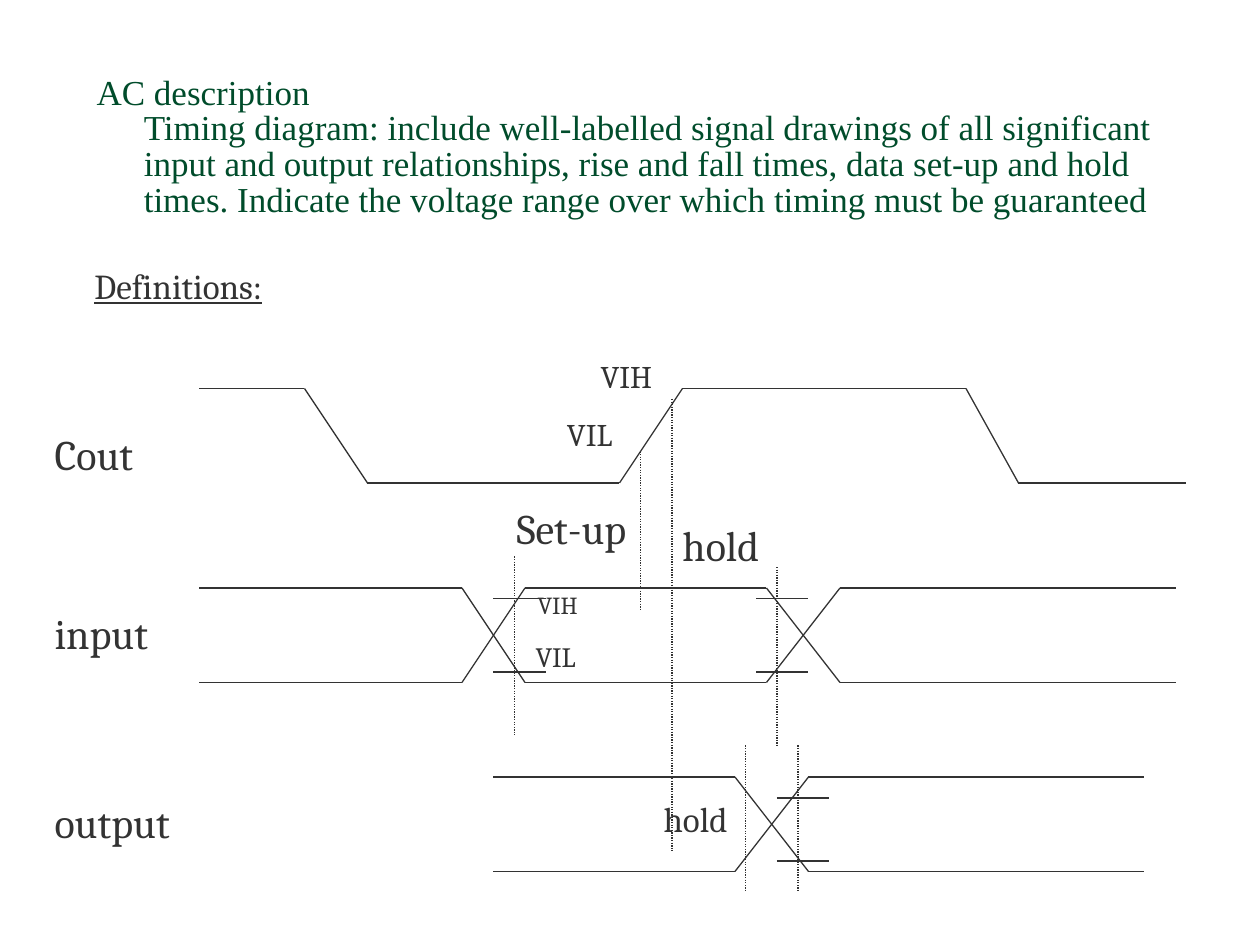
from itertools import pairwise

from lxml import etree
from pptx import Presentation
from pptx import util as u
from pptx.dml.color import RGBColor
from pptx.enum import dml, shapes, text
from pptx.oxml.ns import qn

EMU_PER_PX = 7620
COLORS = {"ink": "333333", "title": "004C2B"}


def px(length):
    return u.Emu(length * EMU_PER_PX)


class TimingSlide:
    body_font = "Cambria"
    title_font = "Times New Roman"
    line_width = u.Pt(0.75)
    line_spacing = 0.85

    def __init__(self, presentation):
        self.slide = presentation.slides.add_slide(presentation.slide_layouts[6])

    def label(self, words, box, size, color="ink", font=None, underline=None,
              anchor=text.MSO_ANCHOR.TOP):
        shape = self.slide.shapes.add_textbox(*map(px, box))
        frame = shape.text_frame
        frame.word_wrap = True
        frame.vertical_anchor = anchor
        frame.margin_left = frame.margin_right = px(2)
        frame.margin_top = frame.margin_bottom = px(6)
        frame.text = words
        paragraph = frame.paragraphs[0]
        paragraph.line_spacing = self.line_spacing
        for run in paragraph.runs:
            run.font.name = font or self.body_font
            run.font.size = u.Pt(size)
            run.font.underline = underline
            run.font.color.rgb = RGBColor.from_string(COLORS[color])
        return paragraph

    def title(self, words, box, size, hanging):
        paragraph = self.label(words, box, size, "title", self.title_font,
                               anchor=text.MSO_ANCHOR.MIDDLE)
        properties = paragraph._p.get_or_add_pPr()
        properties.set("marL", str(px(hanging)))
        properties.set("indent", str(-px(hanging)))

    def line(self, start, end, dotted=False):
        connector = self.slide.shapes.add_connector(
            shapes.MSO_CONNECTOR.STRAIGHT, *map(px, (*start, *end)))
        connector.line.width = self.line_width
        connector.line.color.rgb = RGBColor.from_string(COLORS["ink"])
        if dotted:
            connector.line.dash_style = dml.MSO_LINE.ROUND_DOT
        etree.SubElement(connector._element.spPr, qn("a:effectLst"))

    def trace(self, stops, level, other_level):
        points = []
        for index, x in enumerate(stops):
            swapped = (index + 1) // 2 % 2
            points.append((x, other_level if swapped else level))
        previous = points[0]
        for start, end in pairwise(self.corners(stops, level, other_level)):
            self.line(start, end)

    def corners(self, stops, level, other_level):
        levels = (level, other_level)
        return [(x, levels[index // 2 % 2]) for index, x in enumerate(stops)]

    def bus(self, stops, high, low):
        self.trace(stops, high, low)
        self.trace(stops, low, high)


def main():
    presentation = Presentation()
    presentation.slide_width = px(1200)
    presentation.slide_height = px(900)
    timing = TimingSlide(presentation)

    timing.title(
        "AC description\vTiming diagram: include well-labelled signal drawings "
        "of all significant input and output relationships, rise and fall times, "
        "data set-up and hold times. Indicate the voltage range over which "
        "timing must be guaranteed", (90, 60, 1020, 162), 20, 45)
    timing.label("Definitions:", (88, 252, 182, 52), 20, underline=True)

    timing.trace((190, 290, 350, 590, 650, 920, 970, 1130), 370, 460)
    timing.bus((190, 440, 500, 730, 800, 1120), 560, 650)
    timing.bus((470, 700, 770, 1090), 740, 830)

    for x, top, bottom in ((490, 530, 700), (740, 540, 710), (610, 430, 580),
                           (640, 380, 810), (710, 710, 850), (760, 710, 850)):
        timing.line((x, top), (x, bottom), dotted=True)

    for left, thresholds in ((470, (570, 640)), (720, (570, 640)),
                             (740, (760, 820))):
        for y in thresholds:
            timing.line((left, y), (left + 50, y))

    for words, box, size in (
        ("Cout", (50, 410, 102, 60), 24),
        ("input", (50, 580, 106, 60), 24),
        ("output", (50, 760, 126, 60), 24),
        ("VIH", (510, 560, 66, 40), 14),
        ("VIL", (508, 608, 68, 44), 16),
        ("Set-up", (490, 480, 128, 102), 24),
        ("hold", (648, 496, 95, 60), 24),
        ("hold", (630, 760, 83, 52), 20),
        ("VIH", (570, 340, 77, 48), 18),
        ("VIL", (538, 395, 74, 48), 18),
    ):
        timing.label(words, box, size)

    presentation.save("out.pptx")


if __name__ == "__main__":
    main()
